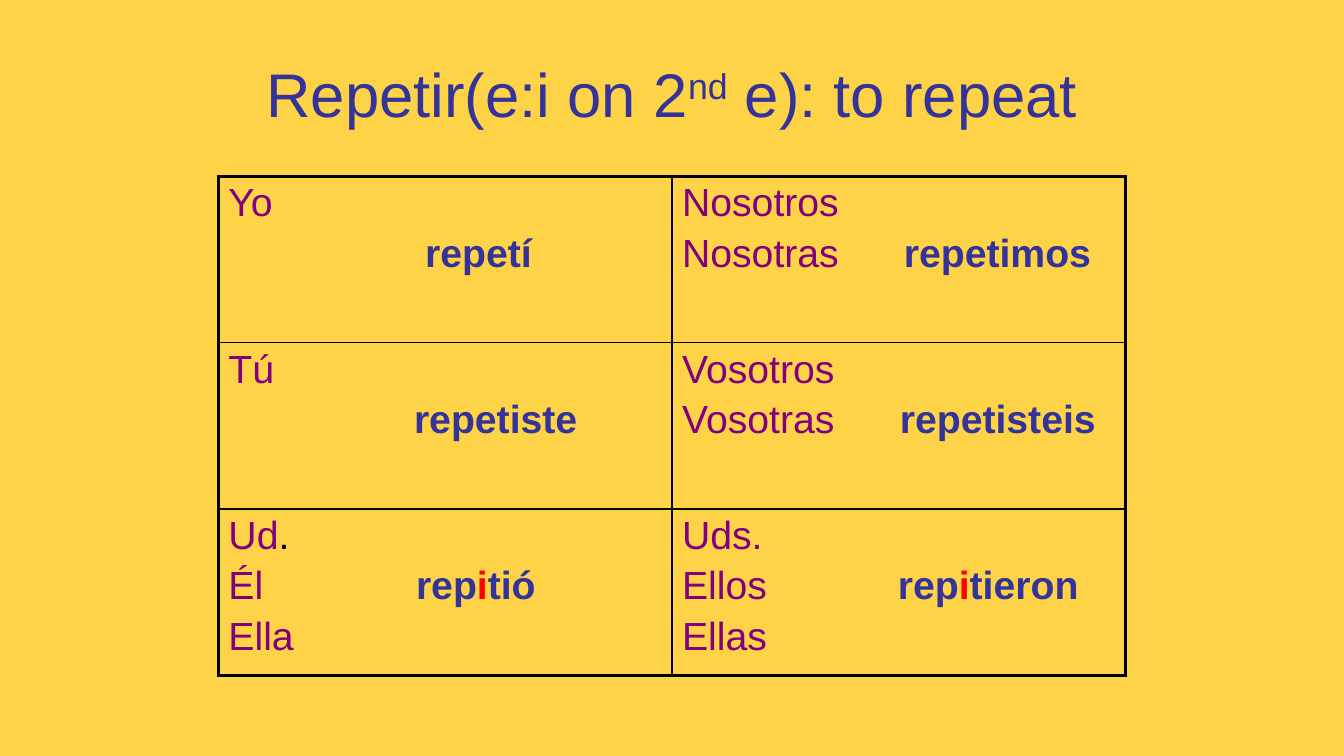
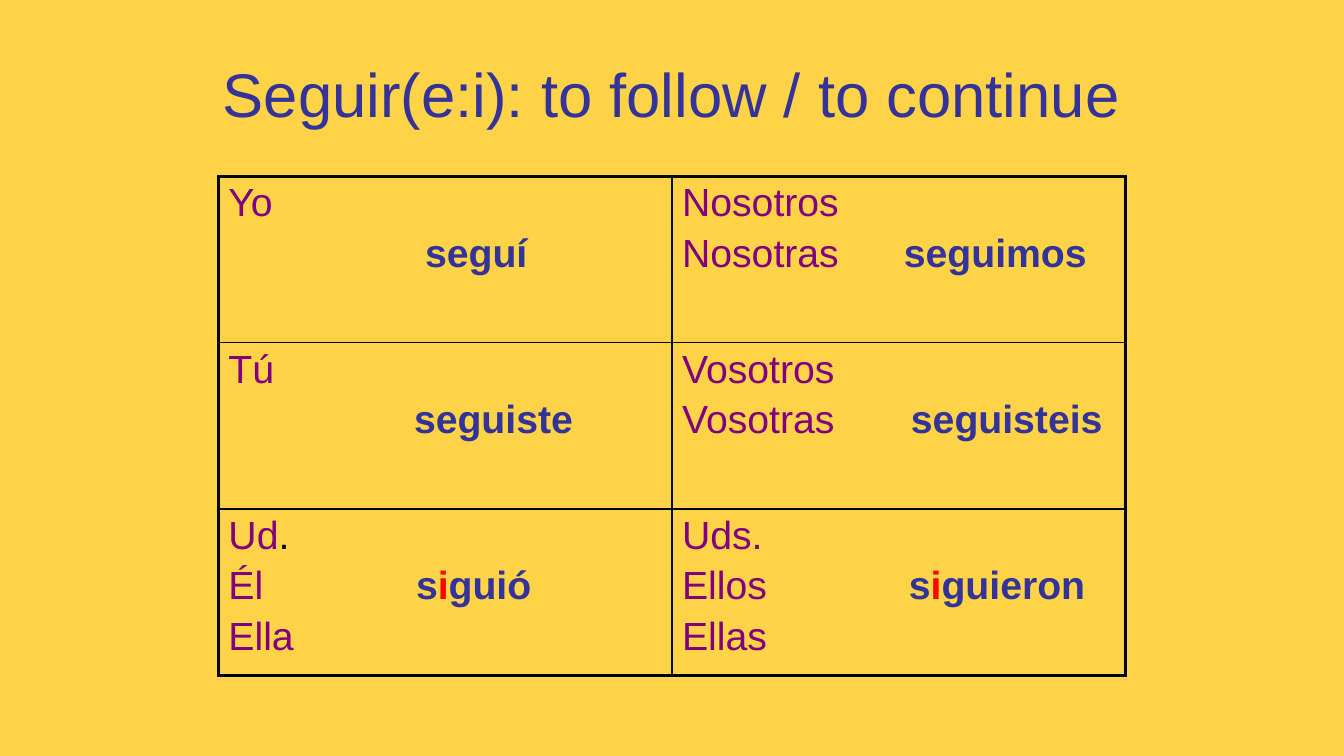
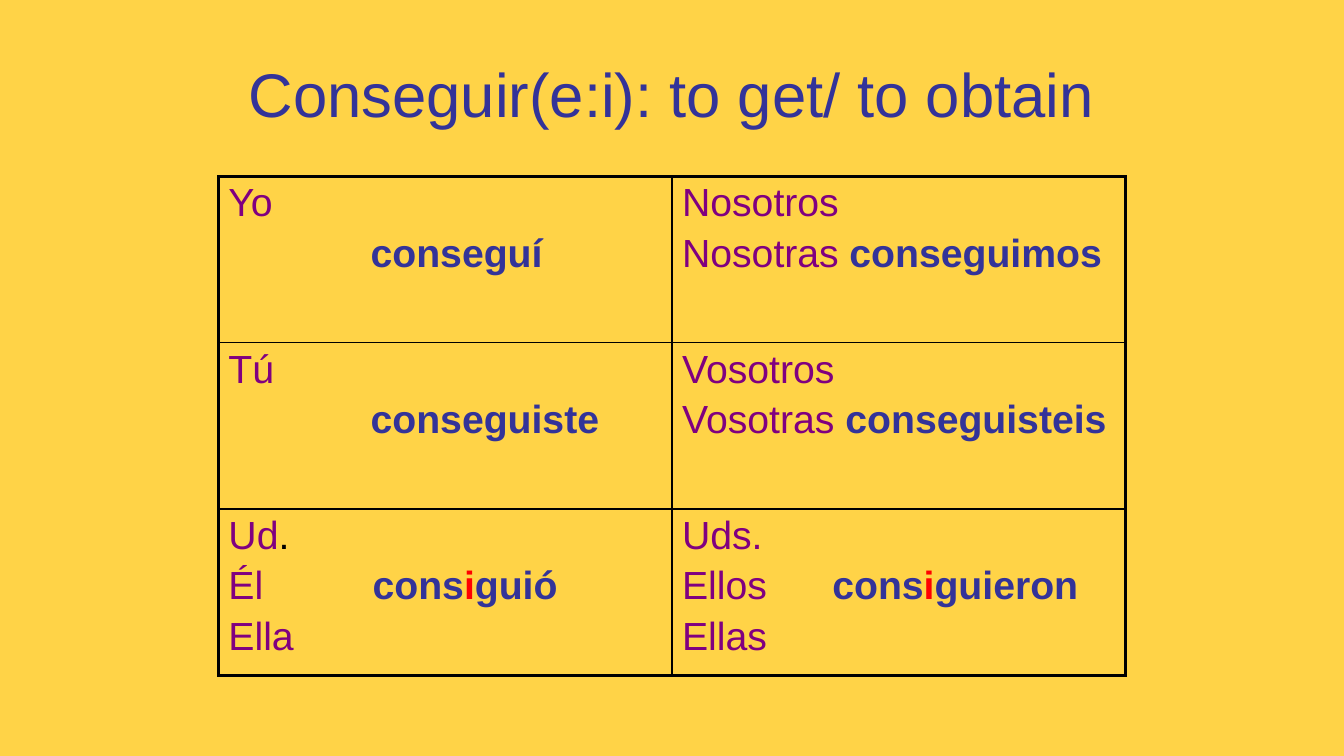
"""Builds three verb conjugation slides that share one style."""
from lxml import etree
from pptx import Presentation
from pptx import util as u
from pptx.dml.color import RGBColor
from pptx.enum import text
from pptx.oxml.ns import qn

COLORS = {
    "ground": "FFD347",
    "verb": "333399",
    "pronoun": "800080",
    "change": "FF0000",
    "ink": "000000",
}
FONT = "Arial"
COLUMNS, ROWS = 80, 45
OUTER, INNER = 2.25, 1

PRONOUNS = [
    [["Yo", ""], ["Nosotros", "Nosotras"]],
    [["Tú", ""], ["Vosotros", "Vosotras"]],
    [["Ud*.*", "Él", "Ella"], ["Uds.", "Ellos", "Ellas"]],
]

VERBS = [
    ("Repetir(e:i on 2*nd* e): to repeat", [
        [("repetí", 1.95), ("repetimos", 2.2)],
        [("repetiste", 1.84), ("repetisteis", 2.16)],
        [("rep*i*tió", 1.86), ("rep*i*tieron", 2.14)],
    ]),
    ("Seguir(e:i): to follow / to continue", [
        [("seguí", 1.95), ("seguimos", 2.2)],
        [("seguiste", 1.84), ("seguisteis", 2.27)],
        [("s*i*guió", 1.86), ("s*i*guieron", 2.25)],
    ]),
    ("Conseguir(e:i): to get/ to obtain", [
        [("conseguí", 1.41), ("conseguimos", 1.66)],
        [("conseguiste", 1.41), ("conseguisteis", 1.62)],
        [("cons*i*guió", 1.43), ("cons*i*guieron", 1.49)],
    ]),
]


def add_text(para, words, size=28, color="pronoun", marked=None, bold=False, raised=0):
    """Add words to a paragraph; parts between asterisks take the marked format."""
    for index, part in enumerate(words.split("*")):
        if not part:
            continue
        special = index % 2 == 1
        span = para.add_run()
        span.text = part
        span.font.name = FONT
        span.font.size = u.Pt(size)
        span.font.bold = bold
        shade = marked if special and marked else color
        span.font.color.rgb = RGBColor.from_string(COLORS[shade])
        if special and raised:
            span.font._element.set("baseline", str(raised * 1000))


class VerbDeck:
    """Holds the shared style and the current slide."""

    def __init__(self):
        """Start a wide deck with the shared background."""
        self.deck = Presentation()
        self.deck.slide_width = u.Inches(13.33)
        self.deck.slide_height = u.Inches(7.5)
        fill = self.deck.slide_master.background.fill
        fill.solid()
        fill.fore_color.rgb = RGBColor.from_string(COLORS["ground"])
        self.page = None

    def across(self, columns):
        """Turn grid columns into a length."""
        return round(self.deck.slide_width * columns / COLUMNS)

    def down(self, rows):
        """Turn grid rows into a length."""
        return round(self.deck.slide_height * rows / ROWS)

    def add_page(self, title):
        """Add a slide and format its title."""
        self.page = self.deck.slides.add_slide(self.deck.slide_layouts[5])
        box = self.page.shapes.title
        box.left, box.top = self.across(4), self.down(1.8)
        box.width, box.height = self.across(72), self.down(7.5)
        frame = box.text_frame
        frame.auto_size = text.MSO_AUTO_SIZE.NONE
        frame.vertical_anchor = text.MSO_ANCHOR.MIDDLE
        para = frame.paragraphs[0]
        para.alignment = text.PP_ALIGN.CENTER
        add_text(para, title, size=44, color="verb", raised=30)

    def add_verb_table(self, forms):
        """Add the table of pronouns and verb forms."""
        count, width = len(PRONOUNS), len(PRONOUNS[0])
        table = self.page.shapes.add_table(
            count, width, self.across(13), self.down(10.5),
            self.across(54), self.down(9.9 * count)).table
        table.first_row = table.horz_banding = False
        for row in range(count):
            for column in range(width):
                cell = table.cell(row, column)
                self.fill_cell(cell, PRONOUNS[row][column], *forms[row][column])
                self.add_borders(cell, {
                    "L": column == 0, "R": column == width - 1,
                    "T": row == 0, "B": row == count - 1})
                cell.fill.background()

    def fill_cell(self, cell, pronouns, form, tab):
        """Write the pronouns, with the verb form at a tab on the second line."""
        frame = cell.text_frame
        for index, pronoun in enumerate(pronouns):
            para = frame.add_paragraph() if index else frame.paragraphs[0]
            if index:
                para.space_before = u.Pt(4.7)
            add_text(para, pronoun, marked="ink")
            if index == 1:
                stops = etree.SubElement(para._p.get_or_add_pPr(), qn("a:tabLst"))
                etree.SubElement(stops, qn("a:tab"), pos=str(u.Inches(tab)), algn="l")
                add_text(para, "\t" + form, color="verb", marked="change", bold=True)

    def add_borders(self, cell, sides):
        """Draw the cell's borders, heavier on the table's outer edge."""
        properties = cell._tc.get_or_add_tcPr()
        for side, outside in sides.items():
            weight = u.Pt(OUTER if outside else INNER)
            line = etree.SubElement(properties, qn("a:ln" + side), w=str(weight))
            fill = etree.SubElement(line, qn("a:solidFill"))
            etree.SubElement(fill, qn("a:srgbClr"), val=COLORS["ink"])


def main():
    """Build and save the deck."""
    verbs = VerbDeck()
    for title, forms in VERBS:
        verbs.add_page(title)
        verbs.add_verb_table(forms)
    verbs.deck.save("out.pptx")


if __name__ == "__main__":
    main()
